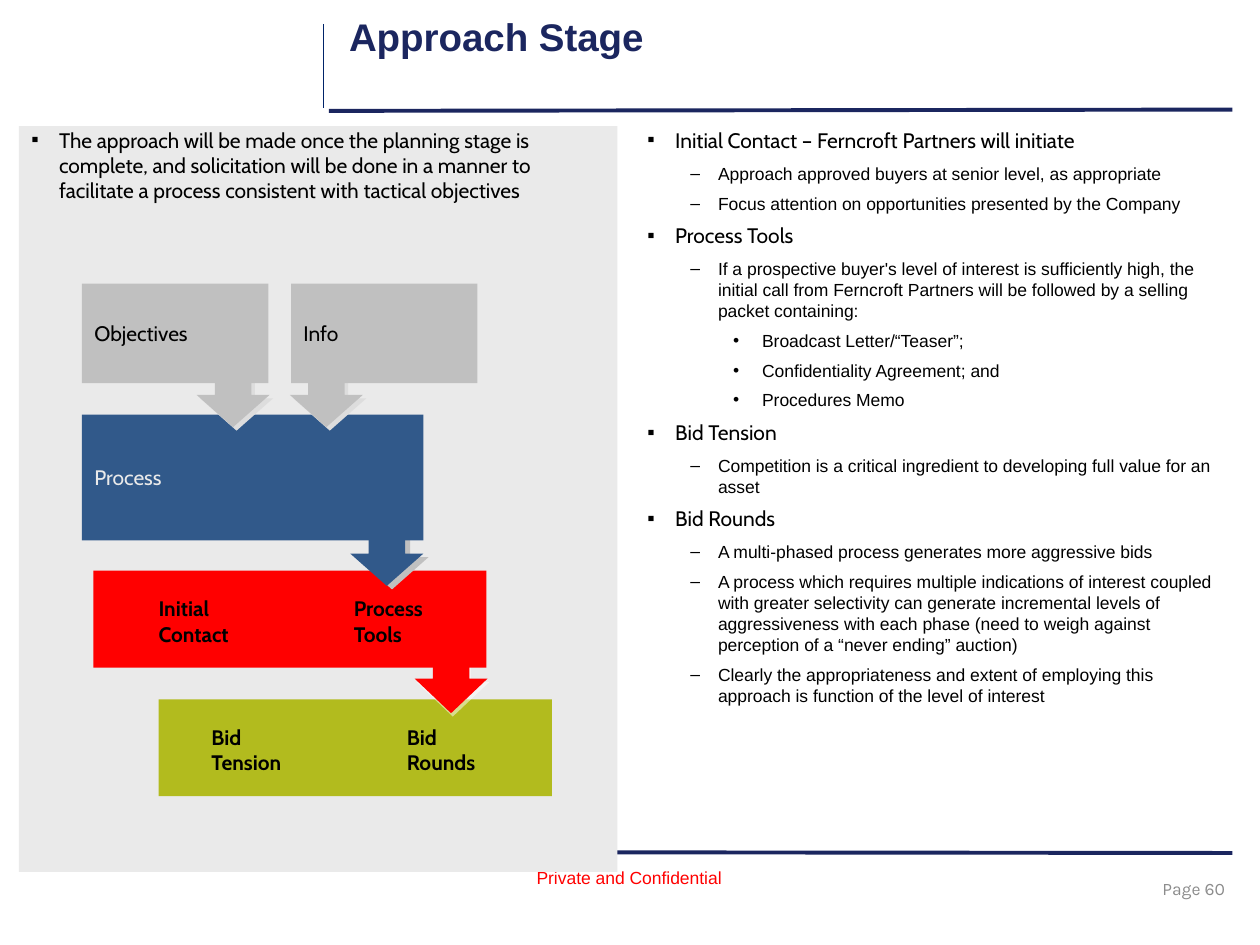
from lxml import etree
from pptx import Presentation
from pptx import util as u
from pptx.dml.color import RGBColor
from pptx.enum import shapes, text
from pptx.oxml.ns import qn

COLORS = {
    "navy": "1B265F", "rule": "002368", "panel": "EAEAEA", "black": "000000",
    "red": "FF0000", "olive": "B2BB1E", "blue": "31598A", "gray": "C0C0C0",
    "pale": "DDDDDD", "white": "FFFFFF", "page": "8C8C8C",
}
LEVELS = [
    ("▪", 0.22, 0.22, 12, "Cabin"),
    ("–", 0.56, 0.22, 10, "Arial"),
    ("•", 0.91, 0.23, 10, "Arial"),
]
INTRO = [(0, "The approach will be made once the planning stage is complete, and solicitation "
             "will be done in a manner to facilitate a process consistent with tactical objectives")]
DETAILS = [
    (0, "Initial Contact – Ferncroft Partners will initiate"),
    (1, "Approach approved buyers at senior level, as appropriate"),
    (1, "Focus attention on opportunities presented by the Company"),
    (0, "Process Tools"),
    (1, "If a prospective buyer's level of interest is sufficiently high, the initial call from "
        "Ferncroft Partners will be followed by a selling packet containing:"),
    (2, "Broadcast Letter/“Teaser”;"),
    (2, "Confidentiality Agreement; and"),
    (2, "Procedures Memo"),
    (0, "Bid Tension"),
    (1, "Competition is a critical ingredient to developing full value for an asset"),
    (0, "Bid Rounds"),
    (1, "A multi-phased process generates more aggressive bids"),
    (1, "A process which requires multiple indications of interest coupled with greater "
        "selectivity can generate incremental levels of aggressiveness with each phase "
        "(need to weigh against perception of a “never ending” auction)"),
    (1, "Clearly the appropriateness and extent of employing this approach is function of "
        "the level of interest"),
]


def color(name):
    return RGBColor.from_string(COLORS[name])


def inches(box):
    return [u.Inches(value) for value in box]


def style(paragraph, size, font, color_name, bold=False):
    paragraph.font.size = u.Pt(size)
    paragraph.font.name = font
    paragraph.font.color.rgb = color(color_name)
    paragraph.font.bold = bold


def add_line(slide, start, end, color_name, width):
    line = slide.shapes.add_connector(
        shapes.MSO_CONNECTOR.STRAIGHT, *inches(start), *inches(end))
    line.line.color.rgb = color(color_name)
    line.line.width = u.Pt(width)
    etree.SubElement(line._element.spPr, qn("a:effectLst"))


def add_text(slide, box, words, size, font, color_name, bold=False, wrap=True):
    shape = slide.shapes.add_textbox(*inches(box))
    shape.text_frame.word_wrap = wrap
    paragraph = shape.text_frame.paragraphs[0]
    paragraph.text = words
    style(paragraph, size, font, color_name, bold)
    return shape


def add_block(slide, box, fill, words="", text_color="black",
              kind=shapes.MSO_SHAPE.RECTANGLE):
    shape = slide.shapes.add_shape(kind, *inches(box))
    shape.fill.solid()
    shape.fill.fore_color.rgb = color(fill)
    shape.line.fill.background()
    shape.shadow.inherit = False
    if words:
        shape.text_frame.vertical_anchor = text.MSO_ANCHOR.MIDDLE
        paragraph = shape.text_frame.paragraphs[0]
        paragraph.text = words
        paragraph.alignment = text.PP_ALIGN.LEFT
        style(paragraph, 12, "Cabin", text_color)
    return shape


def add_arrow(slide, box, fill, shadow):
    arrow = add_block(slide, box, fill, kind=shapes.MSO_SHAPE.DOWN_ARROW)
    arrow.adjustments[0] = 0.5
    arrow.adjustments[1] = 0.61
    shadow_color, opacity, distance, angle = shadow
    effects = arrow._element.spPr.find(qn("a:effectLst"))
    outer = etree.SubElement(effects, qn("a:outerShdw"), dist=str(u.Pt(distance)),
                             dir=str(angle * 60000), algn="ctr", rotWithShape="0")
    tint = etree.SubElement(outer, qn("a:srgbClr"), val=COLORS[shadow_color])
    etree.SubElement(tint, qn("a:alpha"), val=str(opacity * 1000))


def add_bullets(slide, box, items):
    frame = slide.shapes.add_textbox(*inches(box)).text_frame
    frame.word_wrap = True
    for index, (level, words) in enumerate(items):
        paragraph = frame.paragraphs[0] if index == 0 else frame.add_paragraph()
        mark, margin, hanging, size, font = LEVELS[level]
        paragraph.text = words
        paragraph.level = level
        paragraph.space_after = u.Pt(size / 2)
        properties = paragraph._p.get_or_add_pPr()
        properties.set("marL", str(u.Inches(margin)))
        properties.set("indent", str(-u.Inches(hanging)))
        etree.SubElement(properties, qn("a:buFont"), typeface="Arial")
        etree.SubElement(properties, qn("a:buChar"), char=mark)
        style(paragraph, size, font, "black")


def add_header(slide, box):
    left, top, width, height = box
    add_line(slide, (left - 0.06, top + 0.83), (9.78, top + 0.82), "navy", 2.25)
    add_line(slide, (left - 0.1, top + 0.14), (left - 0.1, top + 0.81), "rule", 0.75)
    title = slide.shapes.title
    title.left, title.top, title.width, title.height = inches(box)
    title.text_frame.vertical_anchor = text.MSO_ANCHOR.TOP
    paragraph = title.text_frame.paragraphs[0]
    paragraph.text = "Approach Stage"
    paragraph.alignment = text.PP_ALIGN.LEFT
    style(paragraph, 22, "Arial", "navy", True)


def add_footer(slide, box):
    left, top, width, height = box
    add_line(slide, (left, top), (left + width, top + 0.01), "navy", 2.25)
    add_text(slide, (left + 3.94, top + 0.07, 1.68, 0.27), "Private and Confidential",
             10, "Arial", "red", wrap=False)
    page = add_text(slide, (left + width - 2.29, top + 0.09, 2.33, 0.4), "Page 60",
                    10, "Karla", "page")
    page.text_frame.vertical_anchor = text.MSO_ANCHOR.MIDDLE
    page.text_frame.paragraphs[0].alignment = text.PP_ALIGN.RIGHT


def add_pair(slide, box, fill, labels):
    left, top, width, height = box
    add_block(slide, box, fill)
    for x, words in labels:
        add_text(slide, (left + x, top + 0.15, 0.88, 0.5), words, 12, "Cabin", "black", True)


def add_process(slide, box):
    left, top, width, height = box
    add_pair(slide, (left + 0.61, top + 3.3, 3.12, 0.77), "olive",
             [(0.32, "Bid Tension"), (1.87, "Bid Rounds")])
    add_arrow(slide, (left + 2.64, top + 2.96, 0.58, 0.45), "red", ("white", 50, 2.2, 63))
    add_pair(slide, (left + 0.09, top + 2.28, 3.12, 0.77), "red",
             [(0.42, "Initial Contact"), (1.97, "Process Tools")])
    add_arrow(slide, (left + 2.13, top + 1.98, 0.58, 0.42), "blue", ("gray", 100, 3.6, 34))
    add_block(slide, (left, top + 1.04, 2.71, 1), "blue", "Process", "panel")
    inputs = [(0, 0.91, "Objectives"), (1.66, 1.65, "Info")]
    for block_x, arrow_x, words in inputs:
        add_arrow(slide, (left + arrow_x, top + 0.72, 0.58, 0.42), "gray",
                  ("pale", 100, 2.8, 45))
        add_block(slide, (left + block_x, top, 1.48, 0.79), "gray", words)


def add_left_panel(slide, box):
    left, top, width, height = box
    add_block(slide, box, "panel")
    add_bullets(slide, (left, top - 0.04, 4.72, 0.77), INTRO)
    add_process(slide, (left + 0.5, top + 1.25, 3.73, 4.07))


def main():
    presentation = Presentation()
    presentation.slide_width = u.Inches(10)
    presentation.slide_height = u.Inches(7.5)
    slide = presentation.slides.add_slide(presentation.slide_layouts[5])
    add_footer(slide, (0.22, 6.76, 9.56, 0.5))
    add_header(slide, (2.67, 0.05, 7.17, 0.75))
    add_left_panel(slide, (0.15, 1, 4.75, 5.92))
    add_bullets(slide, (5.04, 0.96, 4.72, 4.78), DETAILS)
    presentation.save("out.pptx")


if __name__ == "__main__":
    main()
